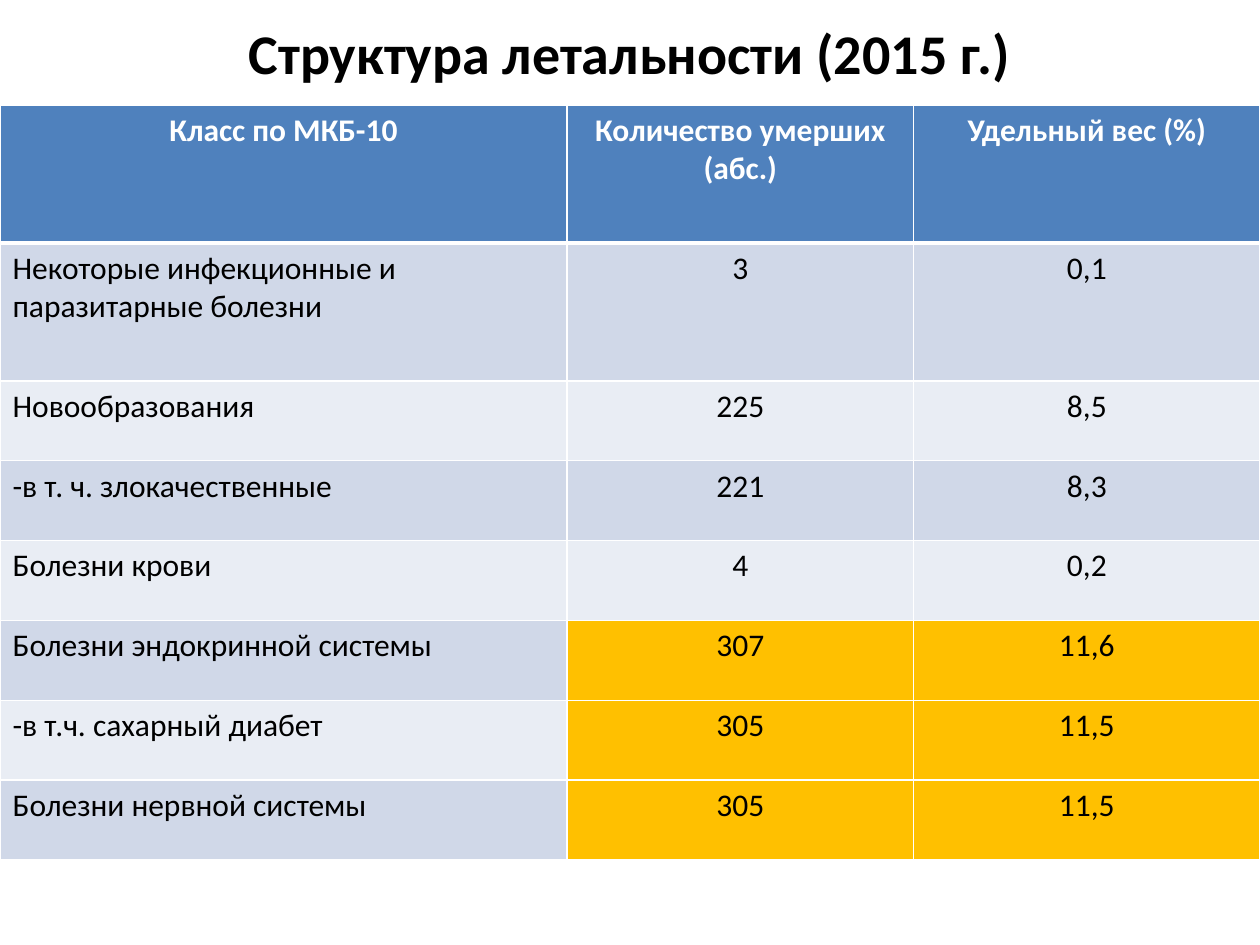
from pptx import Presentation
from pptx.dml.color import RGBColor
from pptx.enum.text import MSO_ANCHOR as Anchor, PP_ALIGN as Align
from pptx.oxml import parse_xml
from pptx.oxml.ns import nsdecls
from pptx.util import Cm, Pt

HEAD = ("Класс по МКБ-10", "Количество умерших (абс.)", "Удельный вес (%)")
ROWS = [
    ("Некоторые инфекционные и паразитарные болезни", "3", "0,1"),
    ("Новообразования", "225", "8,5"),
    ("-в т. ч. злокачественные", "221", "8,3"),
    ("Болезни крови", "4", "0,2"),
    ("Болезни эндокринной системы", "307", "11,6"),
    ("-в т.ч. сахарный диабет", "305", "11,5"),
    ("Болезни нервной системы", "305", "11,5"),
]
WIDTHS = (11.43, 6.99, 6.98)
TALL, LOW = 2.78, 1.61
BLUE, WHITE, BLACK, GOLD = "4F81BD", "FFFFFF", "000000", "FFC000"
BANDS = ("D0D8E8", "E9EDF4")
LIMIT = 10  # shares above this percentage are highlighted


def color(code):
    return RGBColor.from_string(code)


def write(frame, text, size=18, ink=BLACK, bold=False, align=Align.CENTER):
    para = frame.paragraphs[0]
    para.alignment = align
    run = para.add_run()
    run.text = text
    font = run.font
    font.name, font.size, font.bold = "Calibri", Pt(size), bold
    font.color.rgb = color(ink)


def edge(cell, top, base):
    """Draw white cell borders; top and base are widths in points."""
    props = cell._tc.get_or_add_tcPr()
    for side, width in (("L", 1), ("R", 1), ("T", top), ("B", base)):
        props.append(parse_xml(
            f'<a:ln{side} {nsdecls("a")} w="{Pt(width)}"><a:solidFill>'
            f'<a:srgbClr val="{WHITE}"/></a:solidFill></a:ln{side}>'))


def shade(row, col):
    if row == 0:
        return BLUE
    share = float(ROWS[row - 1][2].replace(",", "."))
    return GOLD if col and share > LIMIT else BANDS[(row - 1) % 2]


def add_title(slide, text):
    title = slide.shapes.title
    title.left, title.top = Cm(0.42), Cm(0)
    title.width, title.height = Cm(24.56), Cm(2.12)
    title.text_frame.vertical_anchor = Anchor.MIDDLE
    write(title.text_frame, text, size=32, bold=True)


def add_grid(slide):
    data = [HEAD, *ROWS]
    highs = [TALL] * 2 + [LOW] * (len(data) - 2)
    table = slide.shapes.add_table(
        len(data), len(HEAD), Cm(0), Cm(2.12),
        Cm(sum(WIDTHS)), Cm(sum(highs))).table
    for col, width in zip(table.columns, WIDTHS):
        col.width = Cm(width)
    for i, (texts, high) in enumerate(zip(data, highs)):
        table.rows[i].height = Cm(high)
        for j, text in enumerate(texts):
            cell = table.cell(i, j)
            head = i == 0
            edge(cell, top=3 if i == 1 else 1, base=3 if head else 1)
            cell.fill.solid()
            cell.fill.fore_color.rgb = color(shade(i, j))
            write(cell.text_frame, text, ink=WHITE if head else BLACK, bold=head,
                  align=Align.CENTER if head or j else Align.LEFT)


def main():
    deck = Presentation()
    deck.slide_width, deck.slide_height = Cm(25.4), Cm(19.05)
    slide = deck.slides.add_slide(deck.slide_layouts[5])
    add_title(slide, "Структура летальности (2015 г.)")
    add_grid(slide)
    deck.save("out.pptx")


if __name__ == "__main__":
    main()
